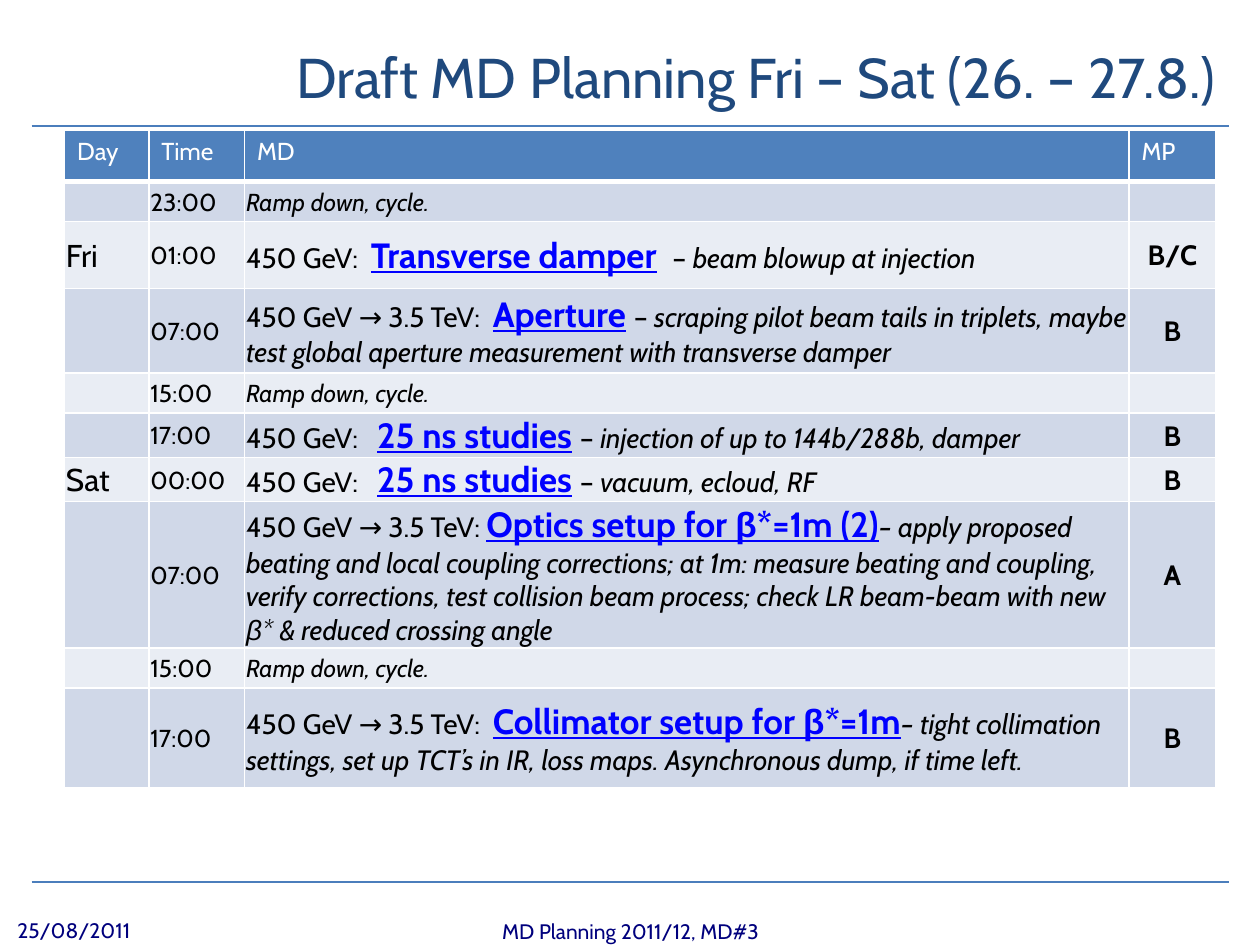
"""Build the machine development planning slide for Friday and Saturday."""
from dataclasses import dataclass

from lxml import etree
from pptx import Presentation
from pptx.dml.color import RGBColor
from pptx.enum.shapes import MSO_CONNECTOR
from pptx.enum.text import MSO_ANCHOR, PP_ALIGN
from pptx.oxml.ns import qn
from pptx.util import Cm, Pt

LEFT, CENTER, RIGHT = PP_ALIGN.LEFT, PP_ALIGN.CENTER, PP_ALIGN.RIGHT
TOP, MIDDLE = MSO_ANCHOR.TOP, MSO_ANCHOR.MIDDLE
STRAIGHT = MSO_CONNECTOR.STRAIGHT

FONT, GREEK_FONT = "Cabin", "Arial"
BLACK, WHITE, BLUE, NAVY = "000000", "FFFFFF", "0000FF", "00007D"
HEADER_FILL, BANDS = "4F81BD", ("D0D8E8", "E9EDF4")
COLUMN_WIDTHS = (1.7, 1.93, 17.83, 1.75)
HEADER_HEIGHT = 1.03

STYLES = {
    "title": {"size": 32, "color": "1F497D"},
    "header": {"size": 14, "color": WHITE},
    "day": {"size": 18},
    "time": {"size": 14},
    "pause": {"size": 14, "italic": True},
    "energy": {"size": 16},
    "topic": {"size": 20, "color": BLUE, "bold": True, "underline": True},
    "gap": {"size": 20},
    "note": {"size": 16, "italic": True},
    "class": {"size": 16, "bold": True},
    "footer": {"size": 12, "color": NAVY},
}


@dataclass
class Run:
    text: str
    style: str


@dataclass
class Slot:
    height: float
    day: str
    time: str
    runs: list[Run]
    mp: str = ""


@dataclass
class Footer:
    text: str
    left: float
    top: float
    width: float
    height: float
    align: PP_ALIGN


def study(energy: str, topic: str, note: str, gap: str = "") -> list[Run]:
    parts = [Run(energy, "energy"), Run(topic, "topic")]
    if gap:
        parts += [Run(gap, "gap"), Run("– ", "energy")]
    return parts + [Run(note, "note")]


PAUSE = [Run("Ramp down, cycle.", "pause")]
INJECTION, RAMP = "450 GeV:", "450 GeV → 3.5 TeV:"
SLOTS = [
    Slot(0.81, "", "23:00", PAUSE),
    Slot(1.35, "Fri", "01:00", study(
        INJECTION + "  ", "Transverse damper", "beam blowup at injection", "  "), "B/C"),
    Slot(1.7, "", "07:00", study(
        RAMP + "  ", "Aperture",
        "scraping pilot beam tails in triplets, maybe test global aperture "
        "measurement with transverse damper", " "), "B"),
    Slot(0.81, "", "15:00", PAUSE),
    Slot(0.89, "", "17:00", study(
        INJECTION + "   ", "25 ns studies", "injection of up to 144b/288b, damper", " "), "B"),
    Slot(0.89, "Sat", "00:00", study(
        INJECTION + "   ", "25 ns studies", "vacuum, ecloud, RF", " "), "B"),
    Slot(2.95, "", "07:00", study(
        RAMP + " ", "Optics setup for β*=1m (2)",
        "– apply proposed beating and local coupling corrections; at 1m: measure "
        "beating and coupling, verify corrections, test collision beam process; "
        "check LR beam-beam with new β* & reduced crossing angle"), "A"),
    Slot(0.81, "", "15:00", PAUSE),
    Slot(2.01, "", "17:00", study(
        RAMP + "  ", "Collimator setup for β*=1m",
        "– tight collimation settings, set up TCT’s in IR, loss maps. "
        "Asynchronous dump, if time left."), "B"),
]
FOOTERS = [
    Footer("MD Planning 2011/12, MD#3", 8.69, 18.42, 8.05, 0.71, CENTER),
    Footer("25/08/2011", 0.1, 18.39, 5.92, 0.74, LEFT),
]


def rgb(value: str) -> RGBColor:
    return RGBColor.from_string(value)


def add_run(p, text: str, style: str, font: str = FONT) -> None:
    r = p.add_run()
    r.text = text
    r.font.name = font
    values = {"bold": False, "italic": False, "color": BLACK} | STYLES[style]
    r.font.color.rgb = rgb(values.pop("color"))
    r.font.size = Pt(values.pop("size"))
    for name, value in values.items():
        setattr(r.font, name, value)


def write(tf, runs: list[Run], align: PP_ALIGN = LEFT) -> None:
    p = tf.paragraphs[0]
    p.alignment = align
    for run in runs:
        before, beta, after = run.text.partition("β")
        for text, font in ((before, FONT), (beta, GREEK_FONT), (after, FONT)):
            if text:
                add_run(p, text, run.style, font)


def add_border(cell, side: str, width: float) -> None:
    ln = etree.SubElement(cell._tc.get_or_add_tcPr(), qn(f"a:ln{side}"), w=str(Pt(width)))
    fill = etree.SubElement(ln, qn("a:solidFill"))
    etree.SubElement(fill, qn("a:srgbClr"), val=WHITE)


def format_cell(cell, fill: str, header: bool) -> None:
    for side in "LRTB":
        add_border(cell, side, 3 if header and side == "B" else 1)
    cell.fill.solid()
    cell.fill.fore_color.rgb = rgb(fill)
    cell.vertical_anchor = TOP if header else MIDDLE
    if not header:
        margins = {"left": 0.03, "right": 0.03, "top": 0.03, "bottom": 0}
        for side, margin in margins.items():
            setattr(cell, f"margin_{side}", Cm(margin))


def add_schedule(slide) -> None:
    heights = [HEADER_HEIGHT] + [slot.height for slot in SLOTS]
    table = slide.shapes.add_table(
        len(heights), len(COLUMN_WIDTHS), Cm(1.3), Cm(2.63),
        Cm(sum(COLUMN_WIDTHS)), Cm(sum(heights))).table
    for column, width in zip(table.columns, COLUMN_WIDTHS):
        column.width = Cm(width)
    rows = [[[Run(text, "header")] for text in ("Day", "Time", "MD", "MP")]]
    for slot in SLOTS:
        rows.append([[Run(slot.day, "day")], [Run(slot.time, "time")],
                     slot.runs, [Run(slot.mp, "class")]])
    for i, (contents, height) in enumerate(zip(rows, heights)):
        table.rows[i].height = Cm(height)
        header = i == 0
        fill = HEADER_FILL if header else BANDS[(i - 1) % 2]
        for j, runs in enumerate(contents):
            cell = table.cell(i, j)
            format_cell(cell, fill, header)
            write(cell.text_frame, runs, CENTER if j == 3 and not header else LEFT)


def add_rule(slide, y: float) -> None:
    line = slide.shapes.add_connector(STRAIGHT, Cm(0.64), Cm(y), Cm(24.77), Cm(y))
    line.line.color.rgb = rgb("4B7EBC")
    line.line.width = Pt(1.5)
    etree.SubElement(line._element.spPr, qn("a:effectLst"))


def add_title(slide, text: str) -> None:
    sp = slide.shapes.title
    sp.left, sp.top, sp.width, sp.height = Cm(2.54), Cm(0.43), Cm(22.23), Cm(2.21)
    sp.text_frame.vertical_anchor = MIDDLE
    write(sp.text_frame, [Run(text, "title")], RIGHT)


def add_footer(slide, footer: Footer) -> None:
    sp = slide.shapes.add_textbox(
        Cm(footer.left), Cm(footer.top), Cm(footer.width), Cm(footer.height))
    tf = sp.text_frame
    tf.word_wrap = True
    tf.vertical_anchor = MIDDLE
    write(tf, [Run(footer.text, "footer")], footer.align)


def main() -> None:
    prs = Presentation()
    prs.slide_width, prs.slide_height = Cm(25.4), Cm(19.05)
    slide = prs.slides.add_slide(prs.slide_layouts[5])
    for y in (2.54, 17.78):
        add_rule(slide, y)
    add_title(slide, "Draft MD Planning Fri – Sat (26. – 27.8.)")
    add_schedule(slide)
    for footer in FOOTERS:
        add_footer(slide, footer)
    prs.save("out.pptx")


if __name__ == "__main__":
    main()
